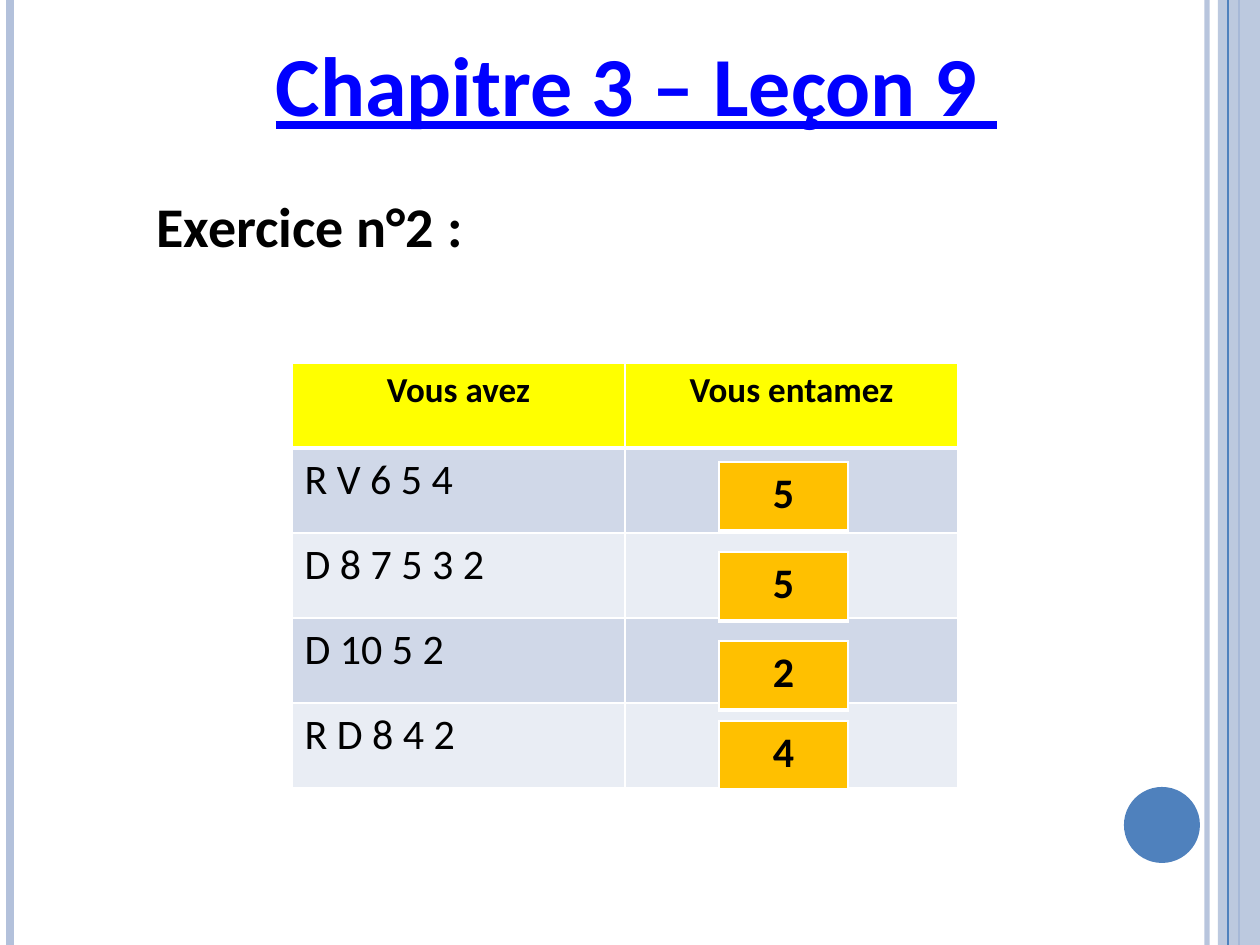
from lxml import etree
from pptx import Presentation, util as u
from pptx.dml.color import RGBColor
from pptx.enum import shapes, text
from pptx.oxml import parse_xml
from pptx.oxml.ns import nsdecls, qn

PX = 914400 / 126
BLUE = RGBColor(0x4F, 0x81, 0xBD)
PALE_BLUE = RGBColor(0xB3, 0xC1, 0xDB)
TITLE_BLUE = RGBColor(0x00, 0x00, 0xFF)
BLACK = RGBColor(0x00, 0x00, 0x00)
YELLOW = RGBColor(0xFF, 0xFF, 0x00)
ORANGE = RGBColor(0xFF, 0xC0, 0x00)
BAND_DARK = RGBColor(0xD0, 0xD8, 0xE8)
BAND_LIGHT = RGBColor(0xE9, 0xED, 0xF4)


def px(*lengths):
    """Turn pixel lengths into EMU."""
    return [u.Emu(round(n * PX)) for n in lengths]


def fill_cell(cell, words, color, size, bold, align, top=1, bottom=1):
    """Write and style a cell; top and bottom are border widths in points."""
    tcPr = cell._tc.get_or_add_tcPr()
    for side, width in zip("LRTB", (1, 1, top, bottom)):
        tcPr.append(parse_xml(
            f'<a:ln{side} {nsdecls("a")} w="{u.Pt(width)}"><a:solidFill>'
            f'<a:srgbClr val="FFFFFF"/></a:solidFill></a:ln{side}>'))
    cell.fill.solid()
    cell.fill.fore_color.rgb = color
    cell.text = words
    p = cell.text_frame.paragraphs[0]
    p.alignment = align
    p.font.name, p.font.size, p.font.bold = "Calibri", u.Pt(size), bold
    p.font.color.rgb = BLACK


prs = Presentation()
prs.slide_width, prs.slide_height = px(1260, 945)
s = prs.slides.add_slide(prs.slide_layouts[5])

# Side stripes: x, colour, width in points, opacity in percent; None is the band
stripes = [(1207, PALE_BLUE, 3, 93), (10, PALE_BLUE, 4.5, 100),
           (1239, BLUE, 1.5, 100), None, (1228, BLUE, 0.75, 100)]
for stripe in stripes:
    if stripe is None:
        sp = s.shapes.add_shape(shapes.MSO_SHAPE.RECTANGLE, *px(1218, 0, 42, 945))
        sp.shadow.inherit = False
        sp.fill.solid()
        sp.fill.fore_color.rgb = PALE_BLUE
        sp.line.fill.background()
        opacity, part = 87, sp
    else:
        x, color, width, opacity = stripe
        part = s.shapes.add_connector(shapes.MSO_CONNECTOR.STRAIGHT, *px(x, 0, x, 945))
        part.line.color.rgb = color
        part.line.width = u.Pt(width)
        etree.SubElement(part._element.spPr, qn("a:effectLst"))
    if opacity < 100:
        clr = next(part._element.spPr.iter(qn("a:srgbClr")))
        etree.SubElement(clr, qn("a:alpha"), val=str(opacity * 1000))

sp = s.shapes.add_shape(shapes.MSO_SHAPE.OVAL, *px(1124, 787, 76, 76))
sp.shadow.inherit = False
sp.fill.solid()
sp.fill.fore_color.rgb = BLUE
sp.line.fill.background()

title = s.shapes.title
title.left, title.top, title.width, title.height = px(263, 26, 942, 115)
tf = title.text_frame
tf.auto_size = text.MSO_AUTO_SIZE.NONE
tf.vertical_anchor = text.MSO_ANCHOR.TOP
p = tf.paragraphs[0]
p.alignment = text.PP_ALIGN.LEFT
for words, color, underline in [("Chapitre 3 – Leçon 9 ", TITLE_BLUE, True),
                                (" ", BLACK, False)]:
    r = p.add_run()
    r.text = words
    r.font.name, r.font.size, r.font.bold = "Calibri", u.Pt(48), True
    r.font.underline = underline
    r.font.color.rgb = color

hands = ["R V 6 5 4", "D 8 7 5 3 2", "D 10 5 2", "R D 8 4 2"]
table = s.shapes.add_table(5, 2, *px(292, 363, 666, 425)).table
for col, heading in enumerate(["Vous avez", "Vous entamez"]):
    fill_cell(table.cell(0, col), heading, YELLOW, 20, True,
              text.PP_ALIGN.CENTER, bottom=3)
for row, hand in enumerate(hands, 1):
    band = BAND_DARK if row % 2 else BAND_LIGHT
    for col, words in enumerate([hand, ""]):
        fill_cell(table.cell(row, col), words, band, 24, False,
                  text.PP_ALIGN.LEFT, top=3 if row == 1 else 1)

exercise = s.shapes.add_textbox(*px(144, 185, 883, 81))
tf = exercise.text_frame
tf.word_wrap = True
p = tf.paragraphs[0]
p.text = "Exercice n°2 :"
p.font.name, p.font.size, p.font.bold = "Calibri", u.Pt(32), True
p.font.color.rgb = BLACK

for y, lead in [(462, "5"), (552, "5"), (641, "2"), (721, "4")]:
    answer = s.shapes.add_table(1, 1, *px(719, y, 129, 69)).table
    fill_cell(answer.cell(0, 0), lead, ORANGE, 24, True,
              text.PP_ALIGN.CENTER, bottom=3)

prs.save("out.pptx")
